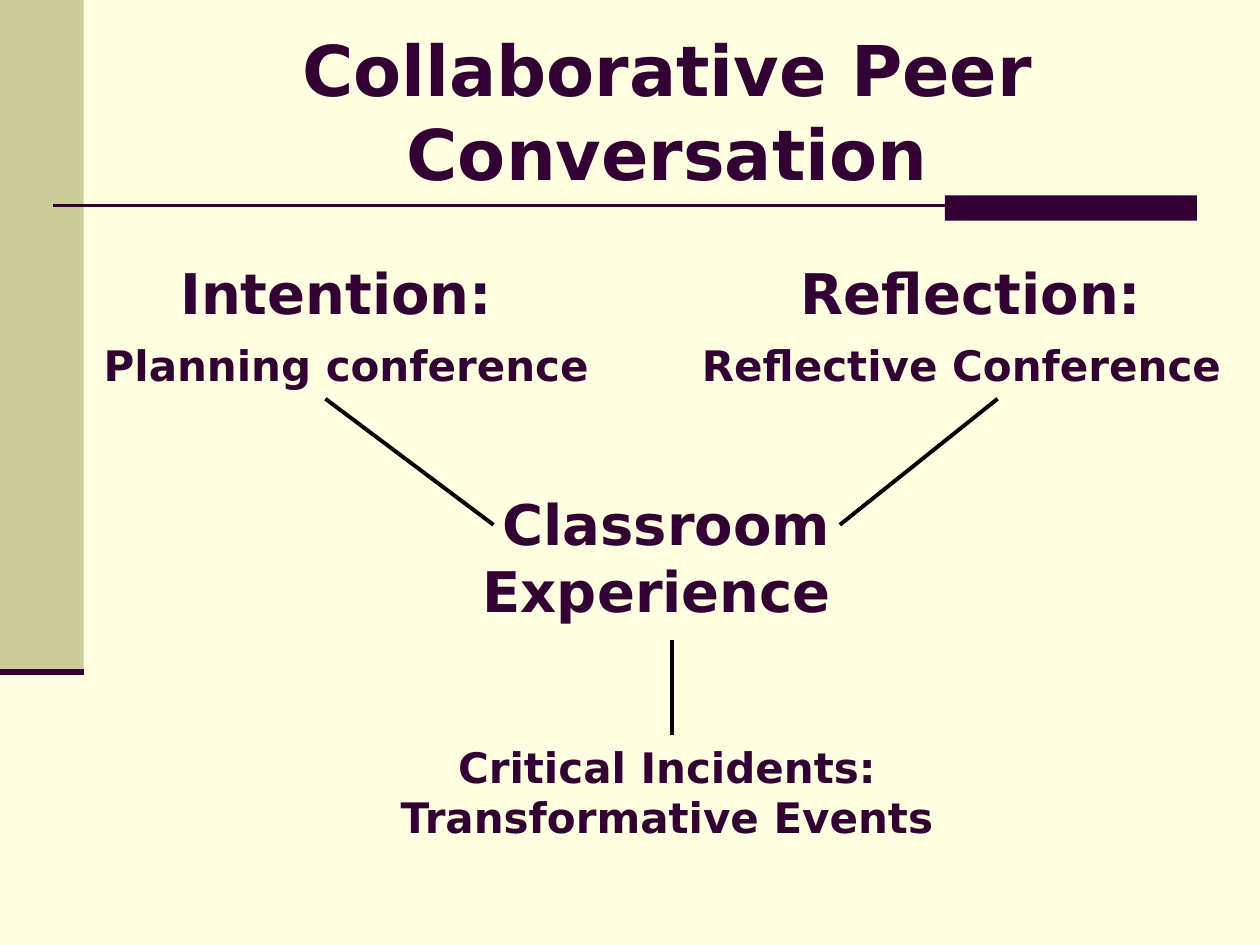
from dataclasses import dataclass

from lxml.etree import SubElement
from pptx import Presentation
from pptx.dml.color import RGBColor
from pptx.enum.shapes import MSO_CONNECTOR, MSO_SHAPE
from pptx.enum.text import MSO_ANCHOR, MSO_AUTO_SIZE, PP_ALIGN
from pptx.oxml.ns import qn
from pptx.slide import Slide
from pptx.text.text import TextFrame
from pptx.util import Cm, Pt

CREAM = RGBColor(0xFF, 0xFF, 0xE1)
KHAKI = RGBColor(0xCC, 0xCC, 0x99)
PLUM = RGBColor(0x33, 0x00, 0x33)
BLACK = RGBColor(0x00, 0x00, 0x00)
FONT = "DejaVu Sans"
HEADING, DETAIL = 32, 24


@dataclass(frozen=True)
class Box:
    """A rectangle in centimetres."""
    left: float
    top: float
    width: float
    height: float

    def lengths(self) -> tuple[Cm, Cm, Cm, Cm]:
        return Cm(self.left), Cm(self.top), Cm(self.width), Cm(self.height)


@dataclass(frozen=True)
class Block:
    box: Box
    paragraphs: list[list[tuple[str, int]]]  # runs as (wording, size in points)


@dataclass(frozen=True)
class Line:
    start: tuple[float, float]
    end: tuple[float, float]
    color: RGBColor = BLACK
    weight: float = 2.25


BARS = [
    (Box(0, 0, 1.69, 13.55), KHAKI),
    (Box(19.05, 3.94, 5.08, 0.51), PLUM),
]
RULES = [
    Line((1.07, 4.14), (24.13, 4.14), PLUM, 1.5),
    Line((0, 13.55), (1.69, 13.55), PLUM, 3.5),
]
BLOCKS = [
    Block(Box(1.69, 5.08, 10.58, 2.96),
          [[("Intention: ", HEADING)],
           [("Planning conference", DETAIL), (" ", HEADING)]]),
    Block(Box(9.31, 9.74, 8.26, 2.96),
          [[("Classroom Experience ", HEADING)]]),
    Block(Box(13.76, 5.08, 11.64, 2.96),
          [[("Reflection:", HEADING)],
           [("Reflective Conference", DETAIL), (" ", HEADING)]]),
    Block(Box(6.99, 14.82, 12.91, 2.29),
          [[("Critical Incidents: Transformative Events", DETAIL)]]),
]
LINKS = [
    Line((6.56, 8.04), (9.95, 10.58)),
    Line((20.11, 8.04), (16.93, 10.58)),
    Line((13.55, 12.91), (13.55, 14.82)),
]


def add_bar(slide: Slide, box: Box, color: RGBColor) -> None:
    bar = slide.shapes.add_shape(MSO_SHAPE.RECTANGLE, *box.lengths())
    bar.shadow.inherit = False
    bar.fill.solid()
    bar.fill.fore_color.rgb = color
    bar.line.fill.background()


def add_line(slide: Slide, line: Line) -> None:
    connector = slide.shapes.add_connector(
        MSO_CONNECTOR.STRAIGHT, *map(Cm, line.start + line.end))
    connector.line.color.rgb = line.color
    connector.line.width = Pt(line.weight)
    SubElement(connector.element.spPr, qn("a:effectLst"))


def fill_text(frame: TextFrame, paragraphs: list[list[tuple[str, int]]]) -> None:
    """Write centred bold paragraphs into the frame."""
    frame.word_wrap = True
    for index, runs in enumerate(paragraphs):
        paragraph = frame.add_paragraph() if index else frame.paragraphs[0]
        paragraph.alignment = PP_ALIGN.CENTER
        for wording, size in runs:
            run = paragraph.add_run()
            run.text = wording
            run.font.name = FONT
            run.font.size = Pt(size)
            run.font.bold = True
            run.font.color.rgb = PLUM


def add_title(slide: Slide, wording: str, box: Box) -> None:
    title = slide.shapes.title
    title.left, title.top, title.width, title.height = box.lengths()
    title.text_frame.vertical_anchor = MSO_ANCHOR.MIDDLE
    title.text_frame.auto_size = MSO_AUTO_SIZE.NONE
    fill_text(title.text_frame, [[(wording, 40)]])


def add_block(slide: Slide, block: Block) -> None:
    frame = slide.shapes.add_textbox(*block.box.lengths()).text_frame
    fill_text(frame, block.paragraphs)
    frame.auto_size = MSO_AUTO_SIZE.SHAPE_TO_FIT_TEXT


def main() -> None:
    presentation = Presentation()
    presentation.slide_width, presentation.slide_height = Cm(25.4), Cm(19.05)
    slide = presentation.slides.add_slide(presentation.slide_layouts[5])
    slide.background.fill.solid()
    slide.background.fill.fore_color.rgb = CREAM

    for box, color in BARS:
        add_bar(slide, box, color)
    for rule in RULES:
        add_line(slide, rule)
    add_title(slide, "Collaborative Peer Conversation", Box(2.33, 0.64, 22.23, 3.18))
    for block in BLOCKS:
        add_block(slide, block)
    for link in LINKS:
        add_line(slide, link)
    presentation.save("out.pptx")


if __name__ == "__main__":
    main()
